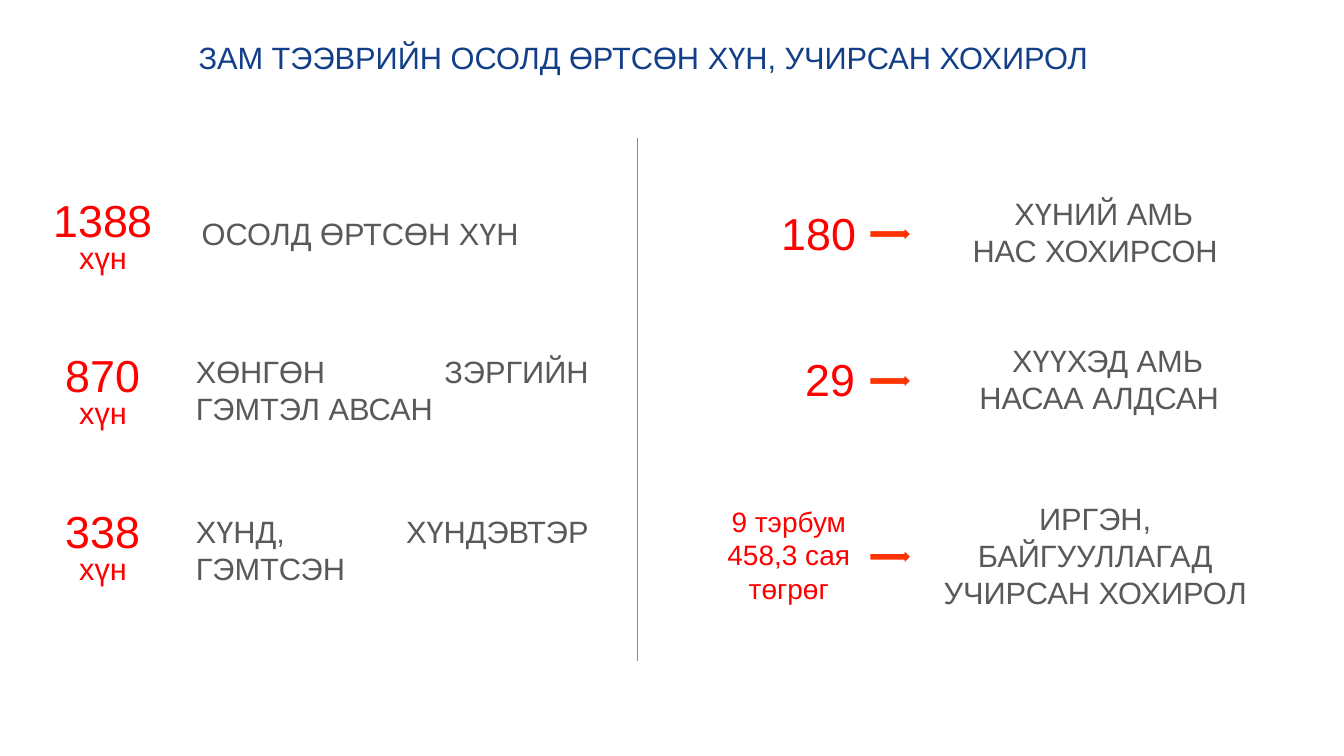
from lxml import etree
from pptx import Presentation
from pptx.dml.color import RGBColor
from pptx.enum.dml import MSO_LINE
from pptx.enum.shapes import MSO_CONNECTOR, MSO_SHAPE
from pptx.enum.text import MSO_ANCHOR, MSO_AUTO_SIZE, PP_ALIGN
from pptx.oxml.ns import qn
from pptx.util import Cm, Pt

ROUND, LABEL = MSO_SHAPE.ROUNDED_RECTANGLE, MSO_SHAPE.FLOWCHART_ALTERNATE_PROCESS
ARROW = MSO_SHAPE.RIGHT_ARROW
LEFT, CENTER, JUST = PP_ALIGN.LEFT, PP_ALIGN.CENTER, PP_ALIGN.JUSTIFY
MIDDLE, FIXED, DOTS = MSO_ANCHOR.MIDDLE, MSO_AUTO_SIZE.NONE, MSO_LINE.ROUND_DOT
WHITE, RED, GREY, BLUE = "FFFFFF", "FF0000", "595959", "123F88"
ORANGE, RULE = "FF3300", "898989"

# Number, label, label left, label top (cm)
HURT = [
    ("1388", "ОСОЛД ӨРТСӨН ХҮН", 4.75, 5.0),
    ("870", "ХӨНГӨН ЗЭРГИЙН ГЭМТЭЛ АВСАН", 4.6, 8.94),
    ("338", "ХҮНД, ХҮНДЭВТЭР ГЭМТСЭН", 4.6, 12.98),
]
# Lines, size, number centre and width, label lines, label left, first indent, row middle
LOSS = [
    (["180"], 32, 20.65, 2.8, "ХҮНИЙ АМЬ\vНАС ХОХИРСОН", 23.4, 0.43, 5.85),
    (["29"], 32, 20.92, 2.06, "ХҮҮХЭД АМЬ\vНАСАА АЛДСАН", 23.5, 0.43, 9.55),
    (["9 тэрбум", "458,3 сая төгрөг"], 20, 19.88, 4.34,
     "ИРГЭН, БАЙГУУЛЛАГАД УЧИРСАН ХОХИРОЛ", 23.4, 0, 13.98),
]


def color(code):
    return RGBColor.from_string(code)


def assign(item, values):
    for name, value in values.items():
        setattr(item, name, value)


def write(shape, lines, size, ink, align, indent=0):
    frame = shape.text_frame
    assign(frame, {"word_wrap": True, "auto_size": FIXED, "vertical_anchor": MIDDLE})
    frame.text = "\n".join(lines)
    for para in frame.paragraphs:
        para.alignment = align
        if indent:
            para._p.get_or_add_pPr().set("indent", str(Cm(indent)))
        for run in para.runs:
            assign(run.font, {"name": "Arial", "size": Pt(size), "bold": False})
            run.font.color.rgb = color(ink)


def draw(slide, kind, box, fill=None, width=0.5):
    shape = slide.shapes.add_shape(kind, *map(Cm, box))
    shape.shadow.inherit = False
    if fill:
        shape.fill.solid()
        shape.fill.fore_color.rgb = color(fill)
    else:
        shape.fill.background()
    shape.line.color.rgb = color(WHITE)
    shape.line.width = Pt(width)
    return shape


def label(slide, box, text, align, indent=0):
    shape = draw(slide, LABEL, box, width=1)
    shape.line.dash_style = DOTS
    write(shape, [text], 22, GREY, align, indent)


def head(slide, box, text):
    title = slide.shapes.title
    assign(title, dict(zip(("left", "top", "width", "height"), map(Cm, box))))
    write(title, [text], 22, BLUE, LEFT)
    title.text_frame.paragraphs[0].line_spacing = 0.9


def count(slide, box, number, unit):
    """Big number with its unit below."""
    left, top, width, height = box
    split = height * 0.57
    for text, size, y, tall in ((number, 32, top, split),
                                (unit, 22, top + split, height - split)):
        part = draw(slide, ROUND, (left, y, width, tall), WHITE)
        write(part, [text], size, RED, CENTER)


def people(slide, box):
    """Left side: people hurt, one row per group."""
    left, top, width, pitch = box
    for row, (number, text, x, y) in enumerate(HURT):
        count(slide, (left, top + row * pitch, 3.6, 1.9), number, "хүн")
        label(slide, (x, y, left + width - x, 1.75), text, JUST)


def losses(slide, box):
    """Right side: number, arrow and label in each row."""
    left, top, width, height = box
    for lines, size, mid, wide, text, x, indent, y in LOSS:
        tall = 1.09 * len(lines)
        part = draw(slide, ROUND, (mid - wide / 2, y - tall / 2, wide, tall), WHITE)
        write(part, lines, size, RED, CENTER)
        draw(slide, ARROW, (left, y - 0.13, 1.04, 0.36), ORANGE, 1)
        label(slide, (x, y - height / 2, width, height), text, CENTER, indent)


def divide(slide, x, top, end):
    rule = slide.shapes.add_connector(MSO_CONNECTOR.STRAIGHT, Cm(x), Cm(top), Cm(x), Cm(end))
    rule.line.color.rgb = color(RULE)
    rule.line.width = Pt(0.5)
    etree.SubElement(rule._element.spPr, qn("a:effectLst"))


def main():
    deck = Presentation()
    assign(deck, {"slide_width": Cm(33.87), "slide_height": Cm(19.05)})
    slide = deck.slides.add_slide(deck.slide_layouts[5])
    head(slide, (4.75, 0.84, 23.9, 1.32), "ЗАМ ТЭЭВРИЙН ОСОЛД ӨРТСӨН ХҮН, УЧИРСАН ХОХИРОЛ")
    people(slide, (0.8, 4.98, 14.37, 3.92))
    losses(slide, (21.92, 4.9, 8.4, 2.2))
    divide(slide, 16.05, 3.48, 16.66)
    deck.save("out.pptx")


if __name__ == "__main__":
    main()
